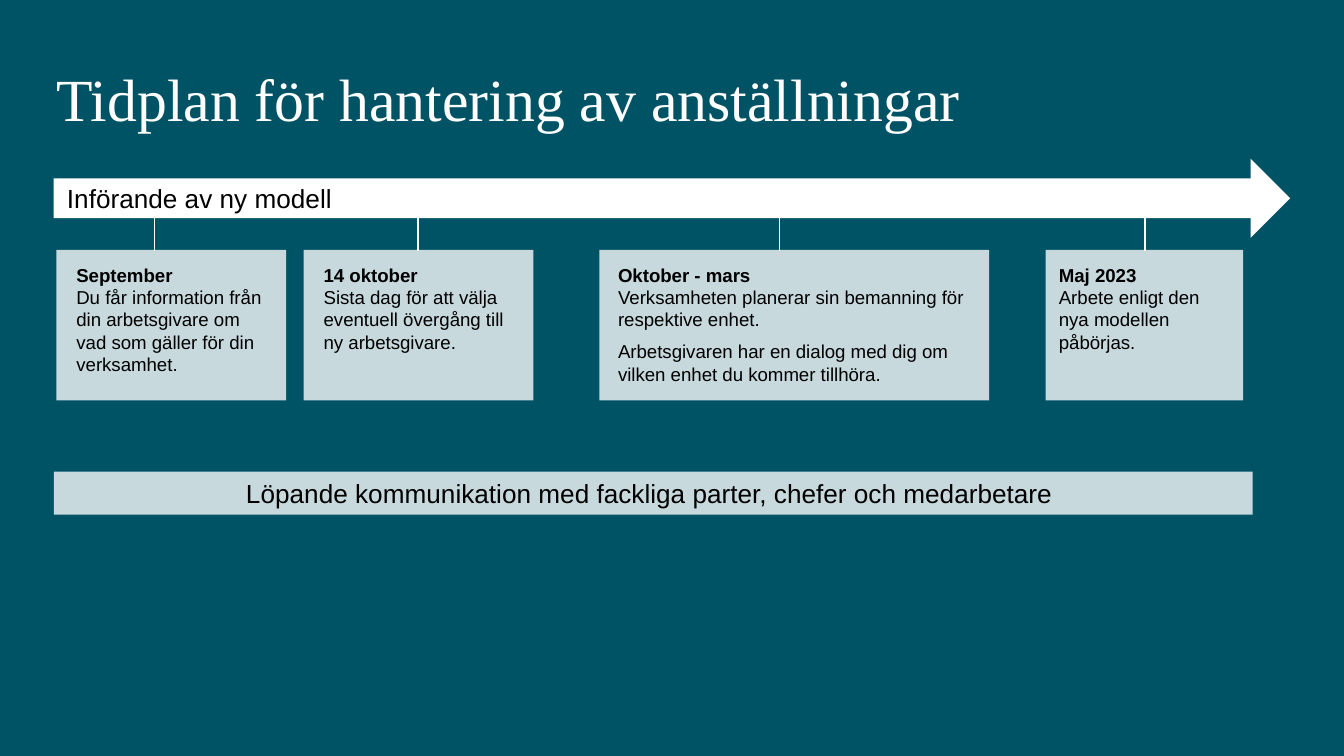
from dataclasses import dataclass

from lxml import etree
from pptx import Presentation
from pptx.dml.color import RGBColor
from pptx.enum.shapes import MSO_CONNECTOR, MSO_SHAPE
from pptx.enum.text import MSO_ANCHOR, PP_ALIGN
from pptx.oxml.ns import qn
from pptx.util import Inches, Pt

RECT, ARROW = MSO_SHAPE.RECTANGLE, MSO_SHAPE.RIGHT_ARROW
STRAIGHT = MSO_CONNECTOR.STRAIGHT
TOP, MIDDLE, BOTTOM = MSO_ANCHOR.TOP, MSO_ANCHOR.MIDDLE, MSO_ANCHOR.BOTTOM
LEFT, CENTER = PP_ALIGN.LEFT, PP_ALIGN.CENTER

GRID = 0.1  # inches per column and per row
CARD_TOP, CARD_ROWS = 18.6, 11.2
STEM_BOTTOM = 18.7


@dataclass(frozen=True)
class Theme:
    background: RGBColor = RGBColor(0x00, 0x53, 0x65)
    light: RGBColor = RGBColor(0xFF, 0xFF, 0xFF)
    dark: RGBColor = RGBColor(0x00, 0x00, 0x00)
    card_opacity: int = 78
    title_font: str = "Times New Roman"
    body_font: str = "Arial"
    title_size: int = 32
    bar_size: int = 14
    card_size: int = 10
    paragraph_gap: int = 5
    line_width: float = 0.75


@dataclass(frozen=True)
class Box:
    """Left, top, width and height in grid units."""
    col: float
    row: float
    cols: float
    rows: float

    def emu(self) -> tuple:
        return tuple(Inches(v * GRID) for v in (self.col, self.row, self.cols, self.rows))


@dataclass(frozen=True)
class Milestone:
    col: float
    cols: float
    text_col: float
    text_cols: float
    stem_col: float
    heading: str
    body: tuple
    stem_top: float = 16


THEME = Theme()
MILESTONES = (
    Milestone(4.2, 17.1, 4.7, 16.6, 11.5, "September",
              ("Du får information från din arbetsgivare om vad som gäller för din verksamhet.",)),
    Milestone(22.6, 17.1, 23.1, 16.6, 31.1, "14 oktober",
              ("Sista dag för att välja eventuell övergång till ny arbetsgivare.",)),
    Milestone(44.6, 29, 45, 27.9, 58, "Oktober - mars",
              ("Verksamheten planerar sin bemanning för respektive enhet.",
               "Arbetsgivaren har en dialog med dig om vilken enhet du kommer tillhöra."),
              stem_top=14.9),
    Milestone(77.8, 14.7, 77.8, 14.2, 85.2, "Maj 2023",
              ("Arbete enligt den nya modellen påbörjas.",)),
)


def set_frame(tf, anchor, insets=(0.1, 0.1, 0.1, 0.1)) -> None:
    left, top, right, bottom = map(Inches, insets)
    formats = {"word_wrap": True, "vertical_anchor": anchor, "margin_left": left,
               "margin_top": top, "margin_right": right, "margin_bottom": bottom}
    for name, value in formats.items():
        setattr(tf, name, value)


def write(p, text: str, size: int, font=THEME.body_font, color=THEME.dark,
          bold=False, align=LEFT) -> None:
    p.alignment = align
    r = p.add_run()
    r.text = text
    for name, value in {"name": font, "size": Pt(size), "bold": bold}.items():
        setattr(r.font, name, value)
    r.font.color.rgb = color


def add_panel(s, kind, box: Box, opacity: int = 100):
    sp = s.shapes.add_shape(kind, *box.emu())
    sp.shadow.inherit = False
    sp.line.fill.background()
    sp.fill.solid()
    sp.fill.fore_color.rgb = THEME.light
    if opacity < 100:
        color = sp.fill._xPr.find(".//" + qn("a:srgbClr"))
        etree.SubElement(color, qn("a:alpha"), val=str(opacity * 1000))
    return sp


def add_bar(s, kind, box: Box, text: str, align, opacity: int = 100) -> None:
    tf = add_panel(s, kind, box, opacity).text_frame
    set_frame(tf, MIDDLE)
    write(tf.paragraphs[0], text, THEME.bar_size, align=align)


def add_stem(s, col: float, top: float) -> None:
    x = Inches(col * GRID)
    line = s.shapes.add_connector(STRAIGHT, x, Inches(STEM_BOTTOM * GRID),
                                  x, Inches(top * GRID))
    line.line.color.rgb = THEME.light
    line.line.width = Pt(THEME.line_width)
    etree.SubElement(line._element.spPr, qn("a:effectLst"))


def add_milestone(s, m: Milestone) -> None:
    add_panel(s, RECT, Box(m.col, CARD_TOP, m.cols, CARD_ROWS), THEME.card_opacity)
    box = Box(m.text_col, CARD_TOP, m.text_cols, CARD_ROWS)
    tf = s.shapes.add_textbox(*box.emu()).text_frame
    set_frame(tf, TOP)
    write(tf.paragraphs[0], m.heading, THEME.card_size, bold=True)
    for i, text in enumerate(m.body):
        p = tf.add_paragraph()
        p.space_before = Pt(THEME.paragraph_gap if i else 0)
        write(p, text, THEME.card_size)
    add_stem(s, m.stem_col, m.stem_top)


def add_title(s, text: str) -> None:
    title = s.shapes.title
    title.left, title.top, title.width, title.height = Box(4.2, 4.1, 82.7, 6.3).emu()
    set_frame(title.text_frame, BOTTOM, (0, 0, 0, 0.04))
    p = title.text_frame.paragraphs[0]
    p.line_spacing = 0.9
    write(p, text, THEME.title_size, THEME.title_font, THEME.light)


def main() -> None:
    prs = Presentation()
    prs.slide_width = Inches(10)
    prs.slide_height = prs.slide_width * 9 // 16
    s = prs.slides.add_slide(prs.slide_layouts[5])
    s.background.fill.solid()
    s.background.fill.fore_color.rgb = THEME.background

    add_title(s, "Tidplan för hantering av anställningar")
    add_bar(s, ARROW, Box(4, 11.8, 92, 5.9), "Införande av ny modell", LEFT)
    for m in MILESTONES:
        add_milestone(s, m)
    add_bar(s, RECT, Box(4, 35.1, 89.2, 3.2),
            "Löpande kommunikation med fackliga parter, chefer och medarbetare ",
            CENTER, THEME.card_opacity)
    prs.save("out.pptx")


if __name__ == "__main__":
    main()
